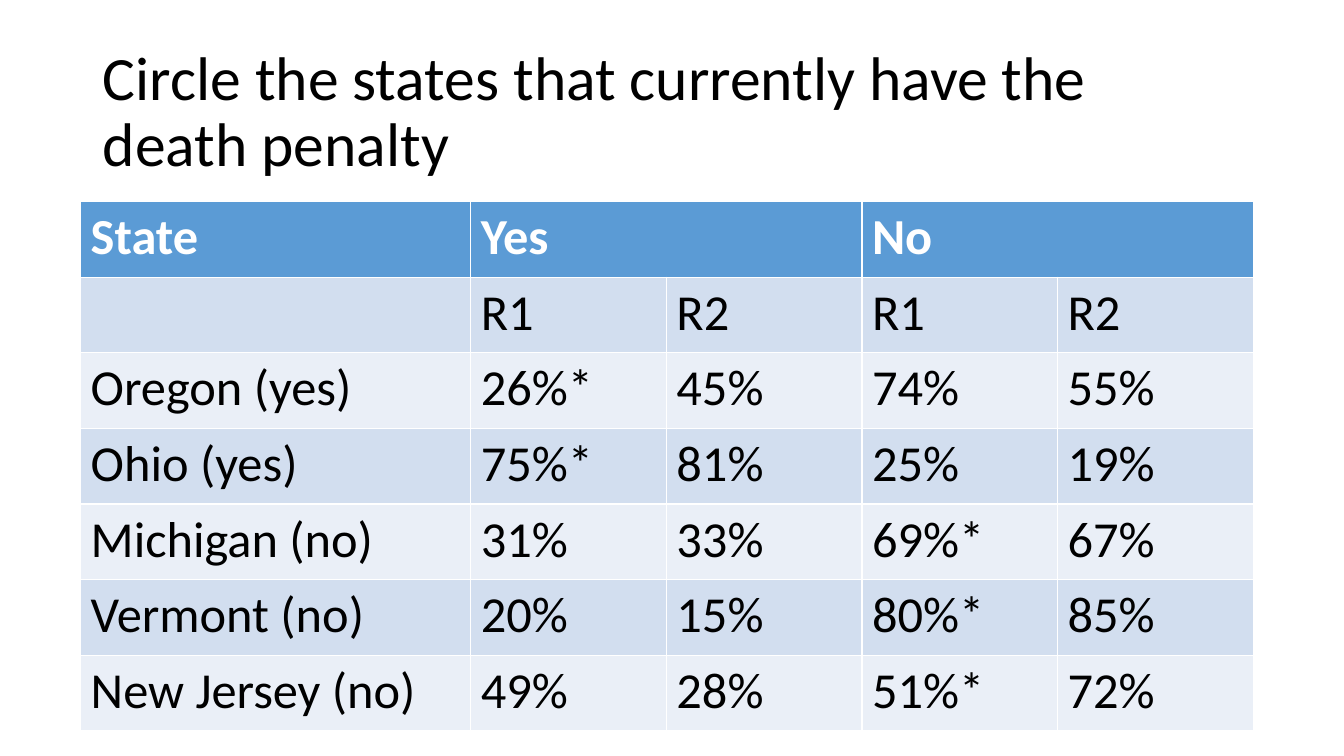
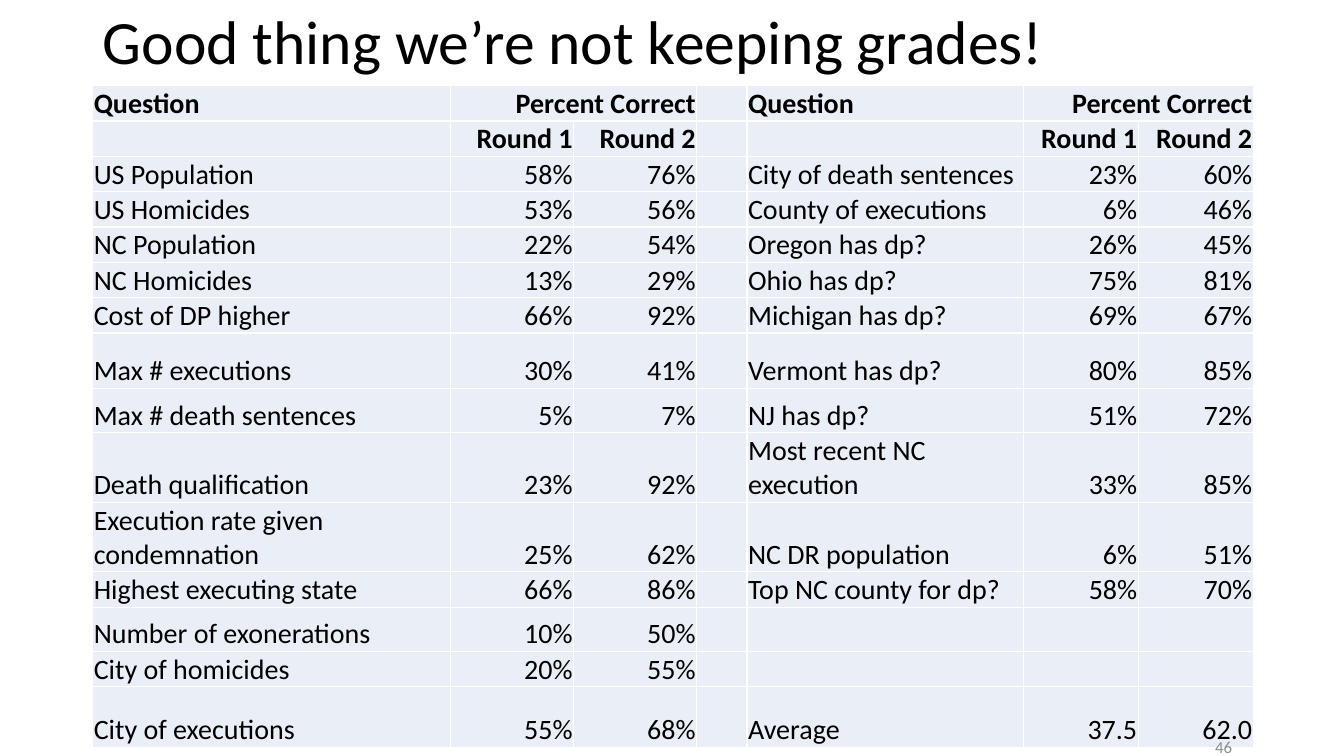
from pptx import Presentation
from pptx.dml.color import RGBColor
from pptx.enum.text import MSO_ANCHOR, PP_ALIGN
from pptx.util import Inches, Pt

LEFT, RIGHT = PP_ALIGN.LEFT, PP_ALIGN.RIGHT
TOP, MIDDLE, BOTTOM = MSO_ANCHOR.TOP, MSO_ANCHOR.MIDDLE, MSO_ANCHOR.BOTTOM

BLACK = RGBColor(0x00, 0x00, 0x00)
WHITE = RGBColor(0xFF, 0xFF, 0xFF)
GRAY = RGBColor(0x8C, 0x8C, 0x8C)
BLUE = RGBColor(0x5B, 0x9B, 0xD5)
BAND_DARK = RGBColor(0xD2, 0xDE, 0xEF)
BAND_LIGHT = RGBColor(0xEA, 0xEF, 0xF7)
FONT = "Calibri"
TITLE_LAYOUT = 5

STATES_TITLE = "Circle the states that currently have the death penalty"
STATES = [
    ("State", "Yes", "", "No", ""),
    ("", "R1", "R2", "R1", "R2"),
    ("Oregon (yes)", "26%*", "45%", "74%", "55%"),
    ("Ohio (yes)", "75%*", "81%", "25%", "19%"),
    ("Michigan (no)", "31%", "33%", "69%*", "67%"),
    ("Vermont (no)", "20%", "15%", "80%*", "85%"),
    ("New Jersey (no)", "49%", "28%", "51%*", "72%"),
]

GRADES_TITLE = "Good thing we’re not keeping grades!"
GRADES_HEADER = [("Question", "Percent Correct", ""), ("", "Round 1", "Round 2")]
FIRST_QUESTIONS = [
    ("US Population", "58%", "76%"),
    ("US Homicides", "53%", "56%"),
    ("NC Population", "22%", "54%"),
    ("NC Homicides", "13%", "29%"),
    ("Cost of DP higher", "66%", "92%"),
    ("Max # executions", "30%", "41%"),
    ("Max # death sentences", "5%", "7%"),
    ("Death qualification", "23%", "92%"),
    ("Execution rate given condemnation", "25%", "62%"),
    ("Highest executing state", "66%", "86%"),
    ("Number of exonerations", "10%", "50%"),
    ("City of homicides", "20%", "55%"),
    ("City of executions", "55%", "68%"),
]
NO_QUESTION = ("", "", "")
SECOND_QUESTIONS = [
    ("City of death sentences", "23%", "60%"),
    ("County of executions", "6%", "46%"),
    ("Oregon has dp?", "26%", "45%"),
    ("Ohio has dp?", "75%", "81%"),
    ("Michigan has dp?", "69%", "67%"),
    ("Vermont has dp?", "80%", "85%"),
    ("NJ has dp?", "51%", "72%"),
    ("Most recent NC execution", "33%", "85%"),
    ("NC DR population", "6%", "51%"),
    ("Top NC county for dp?", "58%", "70%"),
    NO_QUESTION,
    NO_QUESTION,
    ("Average", "37.5", "62.0"),
]
GRADES = [
    (*first, "", *second)
    for first, second in zip(
        GRADES_HEADER + FIRST_QUESTIONS, GRADES_HEADER + SECOND_QUESTIONS
    )
]
GRADES_ROW_HEIGHT = 0.33
TALL_ROWS = {7: 0.55, 8: 0.44, 10: 0.44, 12: 0.44, 14: 0.6}


def style_font(paragraph, size, color=BLACK, bold=False):
    font = paragraph.font
    font.name, font.size, font.bold = FONT, Pt(size), bold
    font.color.rgb = color


def add_titled_slide(presentation, title, top, height):
    slide = presentation.slides.add_slide(presentation.slide_layouts[TITLE_LAYOUT])
    shape = slide.shapes.title
    shape.left, shape.top = Inches(0.92), Inches(top)
    shape.width, shape.height = Inches(11.5), Inches(height)
    frame = shape.text_frame
    frame.text = title
    frame.vertical_anchor = MIDDLE
    paragraph = frame.paragraphs[0]
    paragraph.alignment = LEFT
    paragraph.line_spacing = 0.9
    style_font(paragraph, 44)
    return slide


def add_grid(slide, rows, left, top, widths, heights, merged_columns):
    frame = slide.shapes.add_table(
        len(rows), len(widths), Inches(left), Inches(top),
        Inches(sum(widths)), Inches(sum(heights)),
    )
    table = frame.table
    for column, width in zip(table.columns, widths):
        column.width = Inches(width)
    for row, height in zip(table.rows, heights):
        row.height = Inches(height)
    for column in merged_columns:
        table.cell(0, column).merge(table.cell(0, column + 1))
    return table


def fill_cell(cell, text, fill, size, color=BLACK, bold=False, alignment=LEFT, anchor=TOP):
    cell.text = text
    cell.fill.solid()
    cell.fill.fore_color.rgb = fill
    cell.vertical_anchor = anchor
    paragraph = cell.text_frame.paragraphs[0]
    paragraph.alignment = alignment
    style_font(paragraph, size, color, bold)


def build_states(presentation):
    slide = add_titled_slide(presentation, STATES_TITLE, 0.4, 1.45)
    table = add_grid(
        slide, STATES, 0.8, 2, [3.87] + [1.94] * 4, [0.75] * len(STATES), (1, 3)
    )
    for row, texts in enumerate(STATES):
        header = row == 0
        fill = BLUE if header else BAND_DARK if row % 2 else BAND_LIGHT
        for column, text in enumerate(texts):
            fill_cell(
                table.cell(row, column), text, fill, 36, WHITE if header else BLACK, header
            )


def build_grades(presentation):
    slide = add_titled_slide(presentation, GRADES_TITLE, -0.04, 0.96)
    heights = [TALL_ROWS.get(row, GRADES_ROW_HEIGHT) for row in range(len(GRADES))]
    widths = [3.55, 1.22, 1.22, 0.5, 2.74, 1.14, 1.14]
    table = add_grid(slide, GRADES, 0.92, 0.85, widths, heights, (1, 5))
    table.first_row = table.horz_banding = False
    for row, texts in enumerate(GRADES):
        for column, text in enumerate(texts):
            cell = table.cell(row, column)
            cell.margin_left = cell.margin_top = cell.margin_right = Inches(0.01)
            cell.margin_bottom = 0
            fill_cell(
                cell, text, BAND_LIGHT, 20, bold=row < len(GRADES_HEADER),
                alignment=LEFT if column in (0, 4) else RIGHT, anchor=BOTTOM,
            )

    number = slide.shapes.add_textbox(Inches(9.32), Inches(7.21), Inches(3), Inches(0.4))
    frame = number.text_frame
    frame.word_wrap = True
    frame.vertical_anchor = MIDDLE
    frame.text = "46"
    paragraph = frame.paragraphs[0]
    paragraph.alignment = RIGHT
    style_font(paragraph, 12, GRAY)


def main():
    presentation = Presentation()
    presentation.slide_width, presentation.slide_height = Inches(13.33), Inches(7.5)
    build_states(presentation)
    build_grades(presentation)
    presentation.save("out.pptx")


if __name__ == "__main__":
    main()
